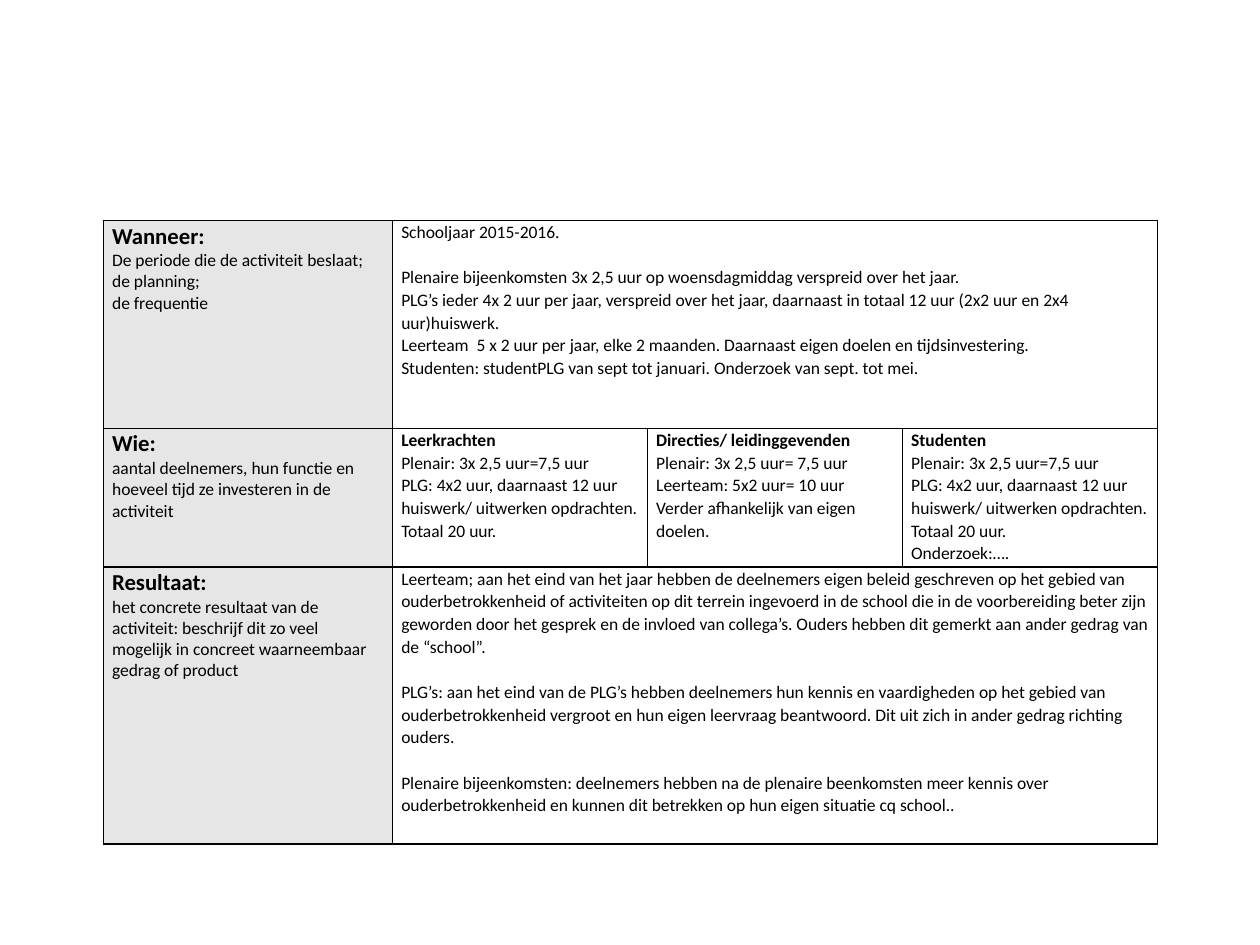
from dataclasses import dataclass
from typing import Any

from lxml import etree
from pptx import Presentation, util as u
from pptx.dml.color import RGBColor
from pptx.enum import text
from pptx.oxml import ns

BLACK = RGBColor(0x00, 0x00, 0x00)
LABEL_GREY = RGBColor(0xE7, 0xE6, 0xE6)

PLG_HOURS = "PLG: 4x2 uur, daarnaast 12 uur huiswerk/ uitwerken opdrachten. Totaal 20 uur."

PLANNING = [
    ("Wanneer:", ["De periode die de activiteit beslaat;", "de planning;\nde frequentie"]),
    [
        ["Schooljaar 2015-2016."],
        [
            "Plenaire bijeenkomsten 3x 2,5 uur op woensdagmiddag verspreid over het jaar.",
            "PLG’s ieder 4x 2 uur per jaar, verspreid over het jaar, daarnaast in totaal 12 uur "
            "(2x2 uur en 2x4 uur)huiswerk.",
            "Leerteam  5 x 2 uur per jaar, elke 2 maanden. Daarnaast eigen doelen en tijdsinvestering.",
            "Studenten: studentPLG van sept tot januari. Onderzoek van sept. tot mei.",
        ],
    ],
]
PARTICIPANTS = [
    ("Wie:", ["aantal deelnemers, hun functie en hoeveel tijd ze investeren in de activiteit"]),
    [
        ("Leerkrachten", ["Plenair: 3x 2,5 uur=7,5 uur", PLG_HOURS]),
        ("Directies/ leidinggevenden", [
            "Plenair: 3x 2,5 uur= 7,5 uur",
            "Leerteam: 5x2 uur= 10 uur",
            "Verder afhankelijk van eigen doelen.",
        ]),
        ("Studenten", ["Plenair: 3x 2,5 uur=7,5 uur", PLG_HOURS, "Onderzoek:…."]),
    ],
]
RESULT = [
    ("Resultaat:", [
        "het concrete resultaat van de activiteit: beschrijf dit zo veel",
        "mogelijk in concreet waarneembaar gedrag of product",
    ]),
    [
        ["Leerteam; aan het eind van het jaar hebben de deelnemers eigen beleid geschreven op het "
         "gebied van ouderbetrokkenheid of activiteiten op dit terrein ingevoerd in de school die in "
         "de voorbereiding beter zijn geworden door het gesprek en de invloed van collega’s. Ouders "
         "hebben dit gemerkt aan ander gedrag van de “school”."],
        ["PLG’s: aan het eind van de PLG’s hebben deelnemers hun kennis en vaardigheden op het gebied "
         "van ouderbetrokkenheid vergroot en hun eigen leervraag beantwoord. Dit uit zich in ander "
         "gedrag richting ouders."],
        ["Plenaire bijeenkomsten: deelnemers hebben na de plenaire beenkomsten meer kennis over "
         "ouderbetrokkenheid en kunnen dit betrekken op hun eigen situatie cq school.."],
    ],
]


@dataclass
class PlanSheet:
    """Draws a bordered plan table on a slide with a 100 by 75 grid."""

    slide: Any
    grid: int = u.Inches(0.1)
    font: str = "Calibri"
    body_size: float = 10
    label_size: float = 13
    leading: float = 1.07
    block_gap: float = 13

    def span(self, units):
        return u.Emu(round(units * self.grid))

    def table(self, left, top, columns, rows):
        frame = self.slide.shapes.add_table(
            len(rows), len(columns), self.span(left), self.span(top),
            self.span(sum(columns)), self.span(sum(rows)))
        plan = frame.table
        plan.first_row = plan.horz_banding = False
        for column, width in zip(plan.columns, columns):
            column.width = self.span(width)
        for row, height in zip(plan.rows, rows):
            row.height = self.span(height)
        for cell in plan.iter_cells():
            cell.margin_left = cell.margin_right = u.Inches(0.07)
            cell.margin_top = cell.margin_bottom = 0
            cell.vertical_anchor = text.MSO_ANCHOR.TOP
            self.borders(cell)
            cell.fill.background()
        return plan

    def borders(self, cell):
        properties = cell._tc.get_or_add_tcPr()
        for side in ("a:lnL", "a:lnR", "a:lnT", "a:lnB"):
            line = etree.SubElement(properties, ns.qn(side), w=str(u.Pt(1)))
            fill = etree.SubElement(line, ns.qn("a:solidFill"))
            etree.SubElement(fill, ns.qn("a:srgbClr"), val=str(BLACK))

    def line(self, cell, words, size=None, bold=False, leading=None, gap=0):
        frame = cell.text_frame
        paragraph = frame.add_paragraph() if frame.text else frame.paragraphs[0]
        paragraph.text = words
        paragraph.line_spacing = leading or self.leading
        paragraph.space_before = u.Pt(gap)
        paragraph.font.name = self.font
        paragraph.font.size = u.Pt(size or self.body_size)
        paragraph.font.bold = bold
        paragraph.font.color.rgb = BLACK

    def label(self, cell, title, hints):
        cell.fill.solid()
        cell.fill.fore_color.rgb = LABEL_GREY
        self.line(cell, title, size=self.label_size, bold=True)
        for hint in hints:
            self.line(cell, hint, leading=1.0)

    def group(self, cell, title, hours):
        self.line(cell, title, bold=True)
        for entry in hours:
            self.line(cell, entry)

    def blocks(self, cell, blocks):
        for number, block in enumerate(blocks):
            for position, entry in enumerate(block):
                starts_block = number > 0 and position == 0
                self.line(cell, entry, gap=self.block_gap if starts_block else 0)


def main():
    deck = Presentation()
    deck.slide_width, deck.slide_height = u.Inches(10), u.Inches(7.5)
    sheet = PlanSheet(deck.slides.add_slide(deck.slide_layouts[6]))
    plan = sheet.table(8.2, 17.5, [22.95] + [20.24] * 3, [16.5, 11, 22])

    for row, (label, content) in enumerate((PLANNING, PARTICIPANTS, RESULT)):
        sheet.label(plan.cell(row, 0), *label)
        if content is PARTICIPANTS[1]:
            for column, group in enumerate(content, start=1):
                sheet.group(plan.cell(row, column), *group)
        else:
            plan.cell(row, 1).merge(plan.cell(row, 3))
            sheet.blocks(plan.cell(row, 1), content)

    deck.save("out.pptx")


if __name__ == "__main__":
    main()
